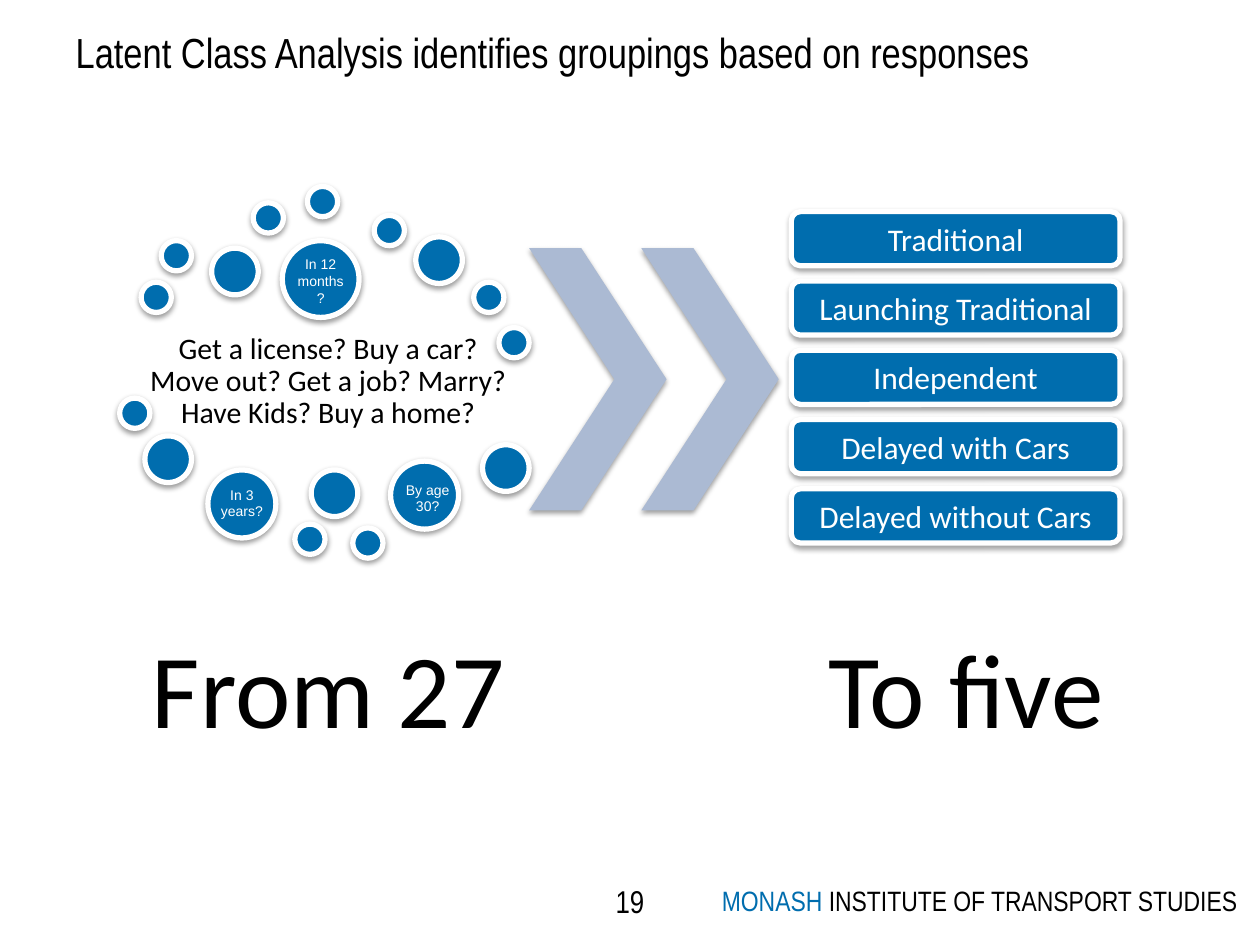
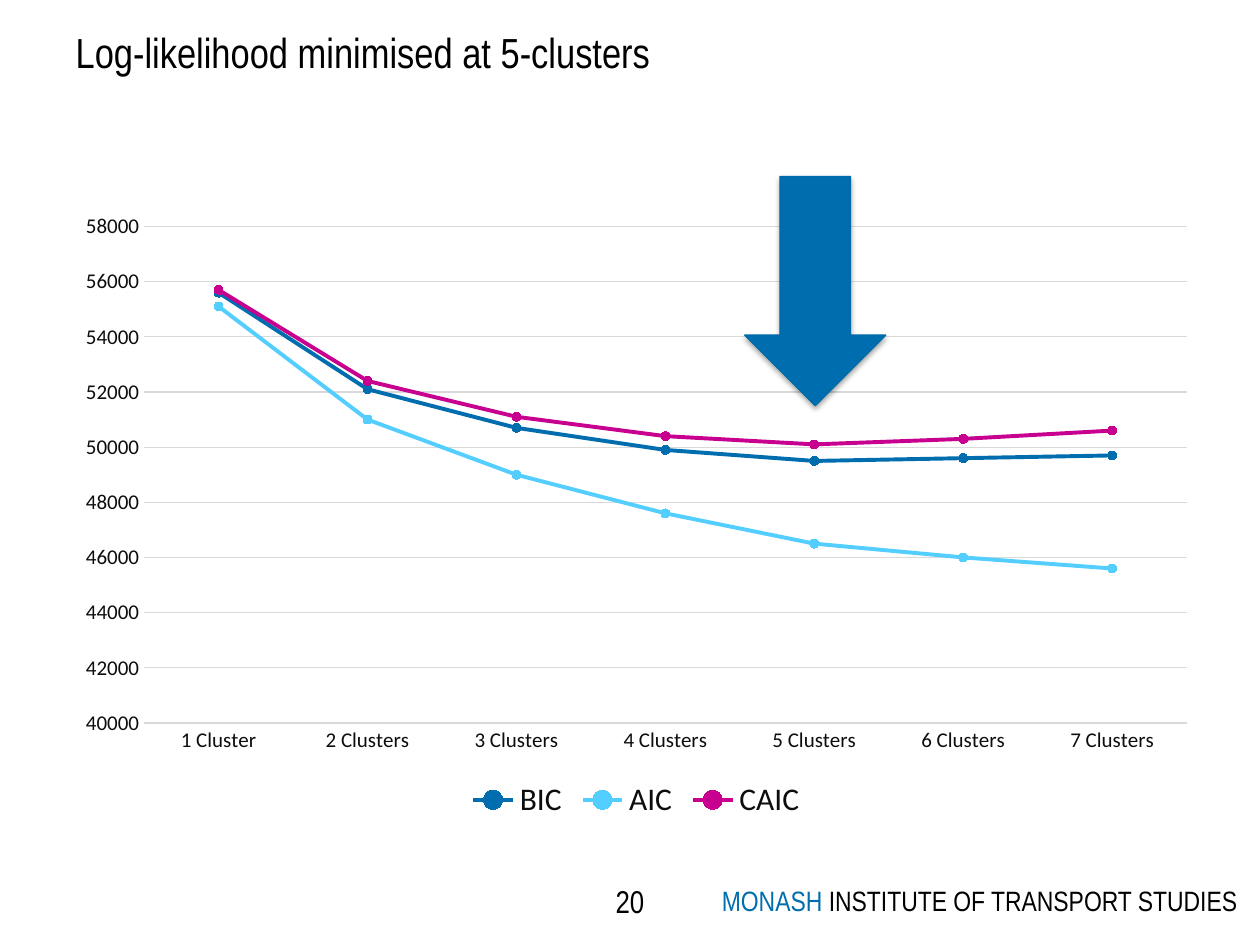
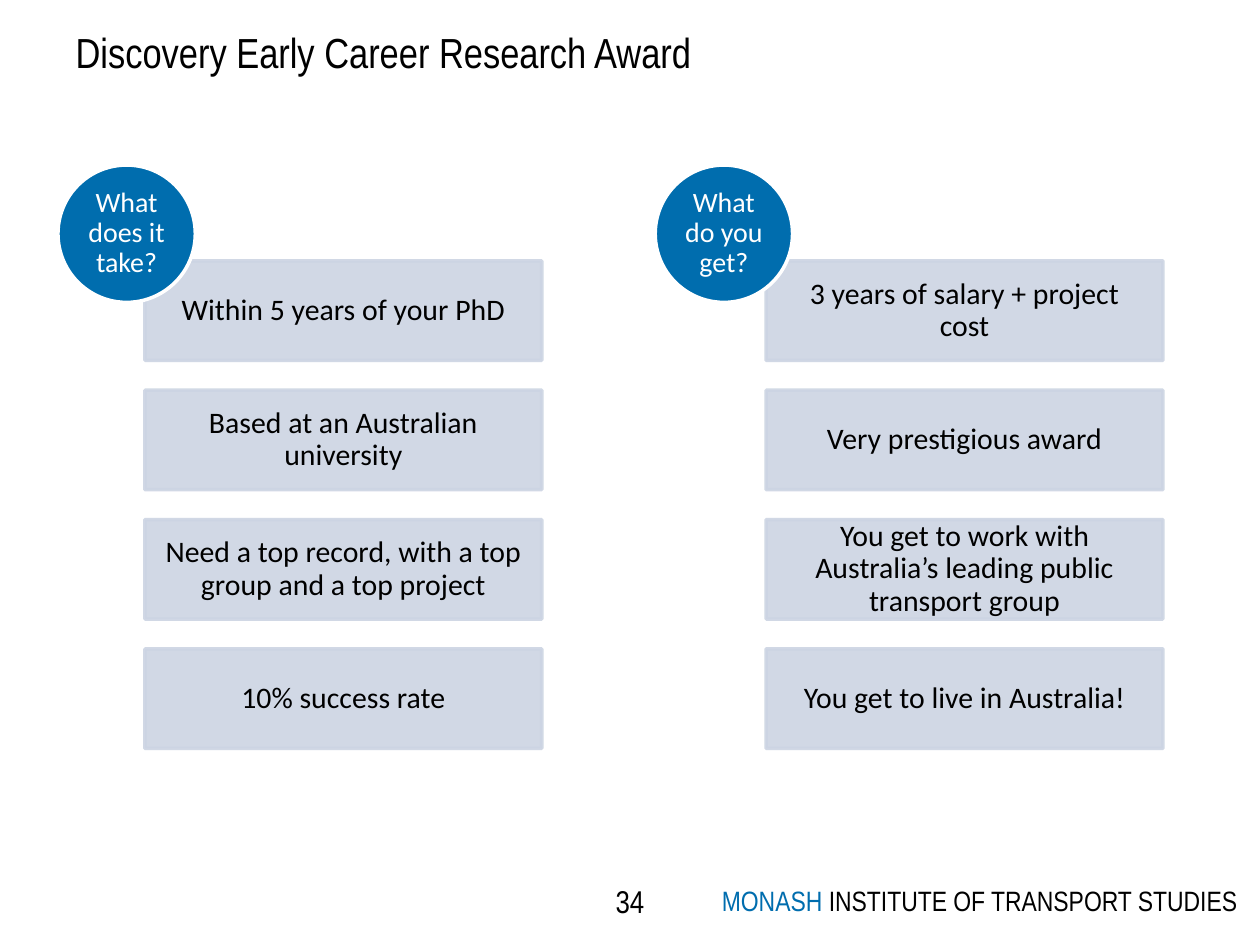
from lxml import etree
from pptx import Presentation
from pptx.chart.data import CategoryChartData
from pptx.dml.color import RGBColor
from pptx.enum.chart import XL_CHART_TYPE, XL_LEGEND_POSITION, XL_MARKER_STYLE, XL_TICK_MARK
from pptx.enum.shapes import MSO_SHAPE
from pptx.enum.text import MSO_ANCHOR, PP_ALIGN
from pptx.oxml.ns import qn
from pptx.util import Inches, Pt

BLUE = RGBColor(0x00, 0x6D, 0xAE)
ARROW_EDGE = RGBColor(0x00, 0x6B, 0xAA)
SKY = RGBColor(0x53, 0xCE, 0xFF)
MAGENTA = RGBColor(0xC8, 0x00, 0x8F)
CHEVRON_BLUE = RGBColor(0xAB, 0xBA, 0xD3)
PALE_BLUE = RGBColor(0xCC, 0xD4, 0xE3)
GRID_GREY = RGBColor(0xD9, 0xD9, 0xD9)
CHART_TEXT = RGBColor(0x0D, 0x0D, 0x0D)
BLACK = RGBColor(0, 0, 0)
WHITE = RGBColor(255, 255, 255)

OVAL, RECTANGLE, ROUNDED = MSO_SHAPE.OVAL, MSO_SHAPE.RECTANGLE, MSO_SHAPE.ROUNDED_RECTANGLE
CHEVRON, DOWN_ARROW = MSO_SHAPE.CHEVRON, MSO_SHAPE.DOWN_ARROW
LEFT, CENTER = PP_ALIGN.LEFT, PP_ALIGN.CENTER
TOP, MIDDLE = MSO_ANCHOR.TOP, MSO_ANCHOR.MIDDLE
NO_TICK = XL_TICK_MARK.NONE
NARROW, BODY, LABEL = "Arial Narrow", "Calibri", "Arial"
DEFAULT_MARGINS = (0.1, 0.05, 0.1, 0.05)
FOOTER = [("MONASH ", BLUE), ("INSTITUTE OF TRANSPORT STUDIES", BLACK)]

QUESTIONS = "Get a license? Buy a car? Move out? Get a job? Marry? Have Kids? Buy a home?"
BUBBLES = {
    0.24: [(1.12, 2.24), (1.28, 1.91), (2.01, 1.61), (2.44, 1.48), (2.97, 1.71), (3.76, 2.24),
           (3.96, 2.6), (0.95, 3.16), (2.34, 4.16), (2.8, 4.19)],
    0.37: [(1.68, 1.97), (3.3, 1.88), (1.15, 3.46), (2.47, 3.73), (3.83, 3.53)],
    0.54: [(1.65, 3.73), (3.1, 3.66)],
    0.61: [(2.24, 1.91)],
}
BUBBLE_LABELS = [
    ("In 3 years?", (1.61, 3.81, 0.62, 0.37)),
    ("By age 30?", (3.03, 3.77, 0.73, 0.37)),
    ("In 12 months?", (2.24, 1.98, 0.61, 0.5)),
]
COUNTS = [("From 27", 1.12), ("To five", 6.18)]
CLASSES = ["Traditional", "Launching Traditional", "Independent", "Delayed with Cars",
           "Delayed without Cars"]

CLUSTERS = ["1 Cluster"] + [f"{count} Clusters" for count in range(2, 8)]
CRITERIA = [
    ("BIC", BLUE, (55600, 52100, 50700, 49900, 49500, 49600, 49700)),
    ("AIC", SKY, (55100, 51000, 49000, 47600, 46500, 46000, 45600)),
    ("CAIC", MAGENTA, (55700, 52400, 51100, 50400, 50100, 50300, 50600)),
]

AWARD_COLUMNS = [
    ("What does it take?", 0.46, 1.15, [
        "Within 5 years of your PhD",
        "Based at an Australian university",
        "Need a top record, with a top group and a top project",
        "10% success rate"]),
    ("What do you get?", 5.2, 6.08, [
        "3 years of salary + project cost",
        "Very prestigious award",
        "You get to work with Australia’s leading public transport group",
        "You get to live in Australia!"]),
]


def inches(box):
    return [Inches(length) for length in box]


def write_text(shape, runs, font, size, color=BLACK, align=CENTER, anchor=MIDDLE,
               margins=DEFAULT_MARGINS, spacing=None):
    frame = shape.text_frame
    frame.word_wrap = True
    frame.vertical_anchor = anchor
    (frame.margin_left, frame.margin_top,
     frame.margin_right, frame.margin_bottom) = inches(margins)
    paragraph = frame.paragraphs[0]
    paragraph.alignment = align
    paragraph.line_spacing = spacing
    paragraph.font.name = font
    paragraph.font.size = Pt(size)
    paragraph.font.color.rgb = color
    for text, run_color in [(runs, None)] if isinstance(runs, str) else runs:
        run = paragraph.add_run()
        run.text = text
        if run_color is not None:
            run.font.color.rgb = run_color


def add_text(slide, box, *text, **style):
    write_text(slide.shapes.add_textbox(*inches(box)), *text, **style)


def add_shape(slide, kind, box, fill, line=None, width=0, shadow=None):
    shape = slide.shapes.add_shape(kind, *inches(box))
    shape.shadow.inherit = False
    shape.fill.solid()
    shape.fill.fore_color.rgb = fill
    if line is None:
        shape.line.fill.background()
    else:
        shape.line.color.rgb = line
        shape.line.width = Pt(width)
    if shadow:
        opacity, distance = shadow
        effects = shape._element.spPr.find(qn("a:effectLst"))
        outer = etree.SubElement(effects, qn("a:outerShdw"), blurRad=str(Pt(3.1)),
                                 dist=str(Pt(distance)), dir="5400000", rotWithShape="0")
        set_opacity(etree.SubElement(outer, qn("a:srgbClr"), val="000000"), opacity)
    return shape


def set_opacity(color_element, percent):
    etree.SubElement(color_element, qn("a:alpha"), val=str(percent * 1000))


def add_slide(presentation, title, number):
    slide = presentation.slides.add_slide(presentation.slide_layouts[5])
    heading = slide.shapes.title
    heading.left, heading.top, heading.width, heading.height = inches((0.5, 0.16, 9, 0.56))
    write_text(heading, title, NARROW, 24, align=LEFT, anchor=TOP)
    add_text(slide, (5.73, 7.01, 4.27, 0.27), FOOTER, NARROW, 16, align=LEFT, anchor=TOP,
             margins=(0, 0, 0.1, 0))
    add_text(slide, (4.46, 6.95, 1.08, 0.4), str(number), NARROW, 18)
    return slide


def build_groupings(presentation):
    slide = add_slide(presentation,
                      "Latent Class Analysis identifies groupings based on responses", 19)
    add_text(slide, (1.12, 2.54, 2.97, 0.98), QUESTIONS, BODY, 17,
             margins=(0.02,) * 4, spacing=0.9)
    for text, left in COUNTS:
        add_text(slide, (left, 4.6, 2.97, 1.83), text, BODY, 60, margins=(0.08,) * 4, spacing=0.9)
    for diameter, places in BUBBLES.items():
        for left, top in places:
            add_shape(slide, OVAL, (left, top, diameter, diameter), BLUE, WHITE, 3, (38, 1.6))
    for left in (4.2, 5.09):
        chevron = add_shape(slide, CHEVRON, (left, 1.97, 1.09, 2.08), CHEVRON_BLUE,
                            shadow=(38, 1.6))
        chevron.adjustments[0] = 0.62
    for text, box in BUBBLE_LABELS:
        add_text(slide, box, text, LABEL, 8, WHITE, anchor=TOP)
    for row, name in enumerate(CLASSES):
        box = (6.28, 1.68 + 0.55 * row, 2.61, 0.43)
        write_text(add_shape(slide, ROUNDED, box, BLUE, WHITE, 3, (35, 1.8)),
                   name, BODY, 18, WHITE)


def style_font(font, size):
    font.name = BODY
    font.size = Pt(size)
    font.color.rgb = CHART_TEXT


def style_line(line, color, width):
    line.color.rgb = color
    line.width = Pt(width)


def build_likelihood(presentation):
    slide = add_slide(presentation, "Log-likelihood minimised at 5-clusters", 20)
    data = CategoryChartData(number_format="0")
    data.categories = CLUSTERS
    for name, _, values in CRITERIA:
        data.add_series(name, values)
    chart = slide.shapes.add_chart(XL_CHART_TYPE.LINE_MARKERS,
                                   *inches((0.5, 1.6, 9.1, 4.95)), data).chart
    style_font(chart.font, 10)
    chart.has_title = False
    chart.has_legend = True
    chart.legend.position = XL_LEGEND_POSITION.BOTTOM
    chart.legend.include_in_layout = False
    style_font(chart.legend.font, 18)
    for axis in (chart.category_axis, chart.value_axis):
        axis.major_tick_mark = axis.minor_tick_mark = NO_TICK
        style_font(axis.tick_labels.font, 12)
    style_line(chart.category_axis.format.line, GRID_GREY, 0.75)
    values_axis = chart.value_axis
    values_axis.minimum_scale, values_axis.maximum_scale = 40000, 58000
    values_axis.major_unit = 2000
    values_axis.format.line.fill.background()
    style_line(values_axis.major_gridlines.format.line, GRID_GREY, 0.75)
    chart.plots[0].vary_by_categories = False
    for series, (_, color, _) in zip(chart.plots[0].series, CRITERIA):
        series.smooth = False
        style_line(series.format.line, color, 2.25)
        marker = series.marker
        marker.style = XL_MARKER_STYLE.CIRCLE
        marker.size = 5
        marker.format.fill.solid()
        marker.format.fill.fore_color.rgb = color
        marker.format.line.color.rgb = color
    add_shape(slide, DOWN_ARROW, (5.91, 1.4, 1.12, 1.82), BLUE, ARROW_EDGE, 0.75, (35, 1.8))


def build_award(presentation):
    slide = add_slide(presentation, "Discovery Early Career Research Award", 34)
    for question, circle_left, panel_left, answers in AWARD_COLUMNS:
        for row, answer in enumerate(answers):
            box = (panel_left, 2.07 + 3.08 / 3 * row, 3.15, 0.79)
            panel = add_shape(slide, RECTANGLE, box, PALE_BLUE, PALE_BLUE, 2)
            for color_element in panel._element.spPr.iter(qn("a:srgbClr")):
                set_opacity(color_element, 90)
            write_text(panel, answer, BODY, 17, margins=(0.13,) * 4, spacing=0.9)
        circle = add_shape(slide, OVAL, (circle_left, 1.31, 1.09, 1.09), BLUE, WHITE, 2)
        write_text(circle, question, BODY, 16, WHITE, margins=(0,) * 4, spacing=0.9)


def main():
    presentation = Presentation()
    presentation.slide_width, presentation.slide_height = Inches(10), Inches(7.5)
    build_groupings(presentation)
    build_likelihood(presentation)
    build_award(presentation)
    presentation.save("out.pptx")


if __name__ == "__main__":
    main()
